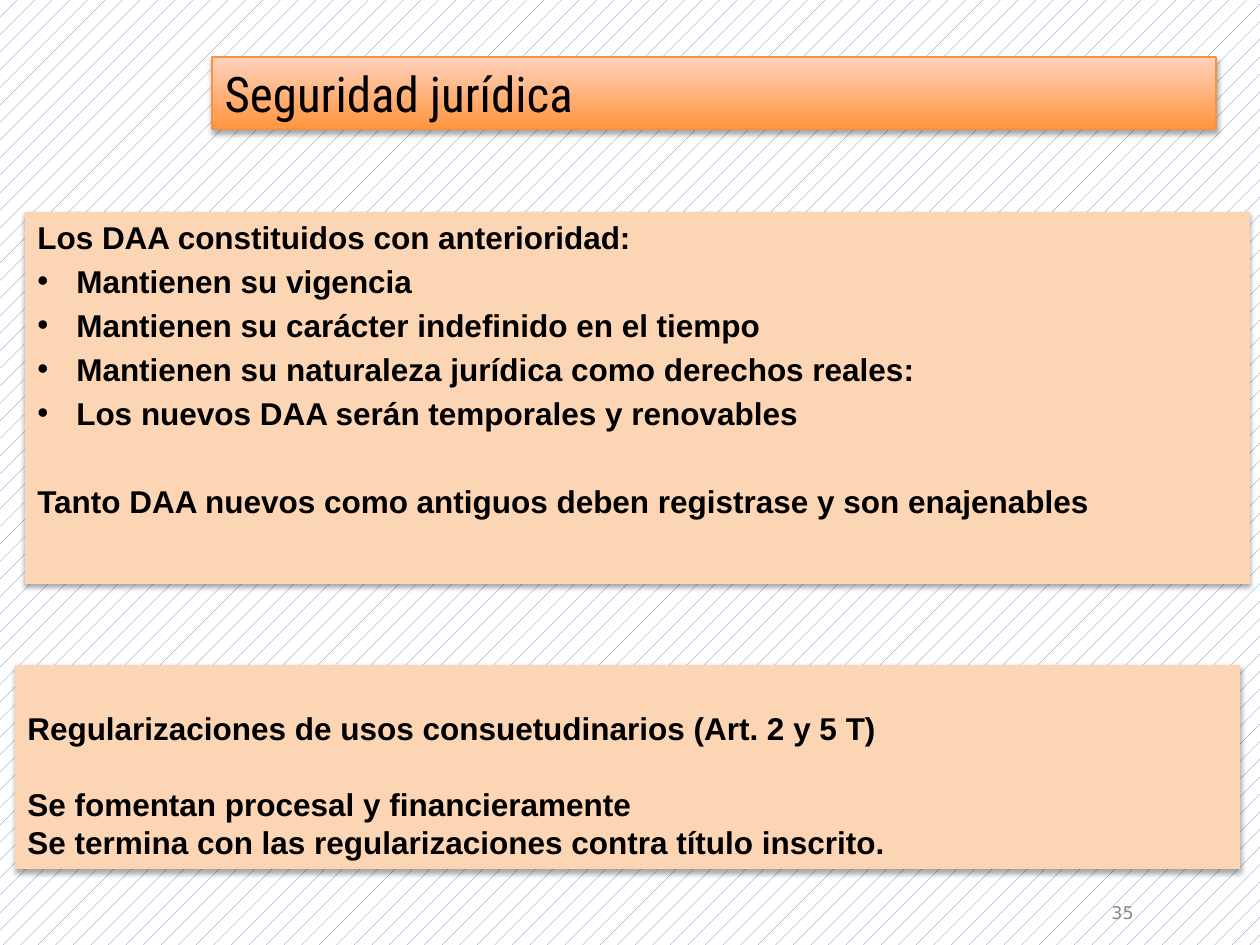
from lxml.etree import SubElement
from pptx import Presentation
from pptx.dml.color import RGBColor
from pptx.enum.dml import MSO_PATTERN
from pptx.enum.shapes import MSO_SHAPE
from pptx.enum.text import MSO_ANCHOR, MSO_AUTO_SIZE, PP_ALIGN
from pptx.oxml.ns import qn
from pptx.util import Pt

PX = 914400 / 126
LINE, GAP = 38, 6  # line height and paragraph gap
COLORS = {
    "hatch": "4F81BD", "page": "FFFFFF", "panel": "FCD5B5",
    "deep": "FF953E", "light": "FFD2BD", "edge": "F69240",
    "text": "000000", "number": "898989",
}


def px(n):
    return round(n * PX)


def color(name):
    return RGBColor.from_string(COLORS[name])


def style(par, size, face, tint, bold=False):
    for run in par.runs:
        font = run.font
        font.size, font.name, font.bold = Pt(size), face, bold
        font.color.rgb = color(tint)


def shade(shape):
    """Give the shape a soft shadow straight below it."""
    shape.shadow.inherit = False
    effects = shape._element.spPr.find(qn("a:effectLst"))
    outer = SubElement(effects, qn("a:outerShdw"), blurRad=str(Pt(3.1)),
                       dist=str(Pt(1.8)), dir="5400000", rotWithShape="0")
    black = SubElement(outer, qn("a:srgbClr"), val=COLORS["text"])
    SubElement(black, qn("a:alpha"), val="35000")


def bullet(par):
    props = par._p.get_or_add_pPr()
    props.set("marL", str(px(39)))
    props.set("indent", str(-px(39)))
    SubElement(props, qn("a:buFont"), typeface="Arial")
    SubElement(props, qn("a:buChar"), char="•")


def title(slide, text, box):
    shape = slide.shapes.title
    shape.left, shape.top, shape.width, shape.height = map(px, box)
    shape.fill.gradient()
    shape.fill.gradient_angle = 90
    for stop, name in zip(shape.fill.gradient_stops, ("deep", "light")):
        stop.color.rgb = color(name)
        stop.position = 0 if name == "deep" else 1
    shape.line.color.rgb = color("edge")
    shape.line.width = Pt(0.75)
    shade(shape)
    frame = shape.text_frame
    frame.text = text
    frame.auto_size = MSO_AUTO_SIZE.NONE
    frame.vertical_anchor = MSO_ANCHOR.MIDDLE
    par = frame.paragraphs[0]
    par.alignment = PP_ALIGN.LEFT
    style(par, 28, "Roboto Condensed", "text")


def panel(slide, box, rows, inset=6):
    """Draw a filled panel; each row is text, space before, bulleted."""
    shape = slide.shapes.add_shape(MSO_SHAPE.RECTANGLE, *map(px, box))
    shape.fill.solid()
    shape.fill.fore_color.rgb = color("panel")
    shape.line.fill.background()
    shade(shape)
    frame = shape.text_frame
    frame.word_wrap = True
    frame.vertical_anchor = MSO_ANCHOR.TOP
    frame.margin_top = px(inset)
    for i, (text, space, dot) in enumerate(rows):
        par = frame.add_paragraph() if i else frame.paragraphs[0]
        par.text = text
        par.alignment = PP_ALIGN.JUSTIFY
        par.line_spacing = px_pt(LINE)
        par.space_before = px_pt(space)
        if dot:
            bullet(par)
        style(par, 18, "Arial", "text", True)


def px_pt(n):
    return Pt(round(n * 72 / 126, 1))


def number(slide, text, box):
    frame = slide.shapes.add_textbox(*map(px, box)).text_frame
    frame.text = text
    frame.word_wrap = True
    frame.vertical_anchor = MSO_ANCHOR.MIDDLE
    par = frame.paragraphs[0]
    par.alignment = PP_ALIGN.RIGHT
    style(par, 10, "DejaVu Sans", "number")


def main():
    deck = Presentation()
    deck.slide_width, deck.slide_height = px(1260), px(945)
    slide = deck.slides.add_slide(deck.slide_layouts[5])

    # Patterned background
    fill = slide.background.fill
    fill.patterned()
    fill.pattern = MSO_PATTERN.PERCENT_5
    fill.fore_color.rgb = color("hatch")
    fill.back_color.rgb = color("page")

    # Page number and title
    number(slide, "35", (852, 900, 294, 26))
    title(slide, "Seguridad jurídica", (212, 57, 1004, 72))

    # Existing and new rights
    panel(slide, (25, 212, 1225, 372), [
        ("Los DAA constituidos con anterioridad:", 0, False),
        ("Mantienen su vigencia", GAP, True),
        ("Mantienen su carácter indefinido en el tiempo", GAP, True),
        ("Mantienen su naturaleza jurídica como derechos reales:", GAP, True),
        ("Los nuevos DAA serán temporales y renovables", GAP, True),
        ("Tanto DAA nuevos como antiguos deben registrase y son enajenables",
         LINE + 2 * GAP, False),
    ])

    # Regularization of customary uses
    panel(slide, (15, 665, 1225, 204), [
        ("Regularizaciones de usos consuetudinarios (Art. 2 y 5 T)", 0, False),
        ("Se fomentan procesal y financieramente", LINE, False),
        ("Se termina con las regularizaciones contra título inscrito.",
         0, False),
    ], inset=LINE + 6)

    deck.save("out.pptx")


if __name__ == "__main__":
    main()
